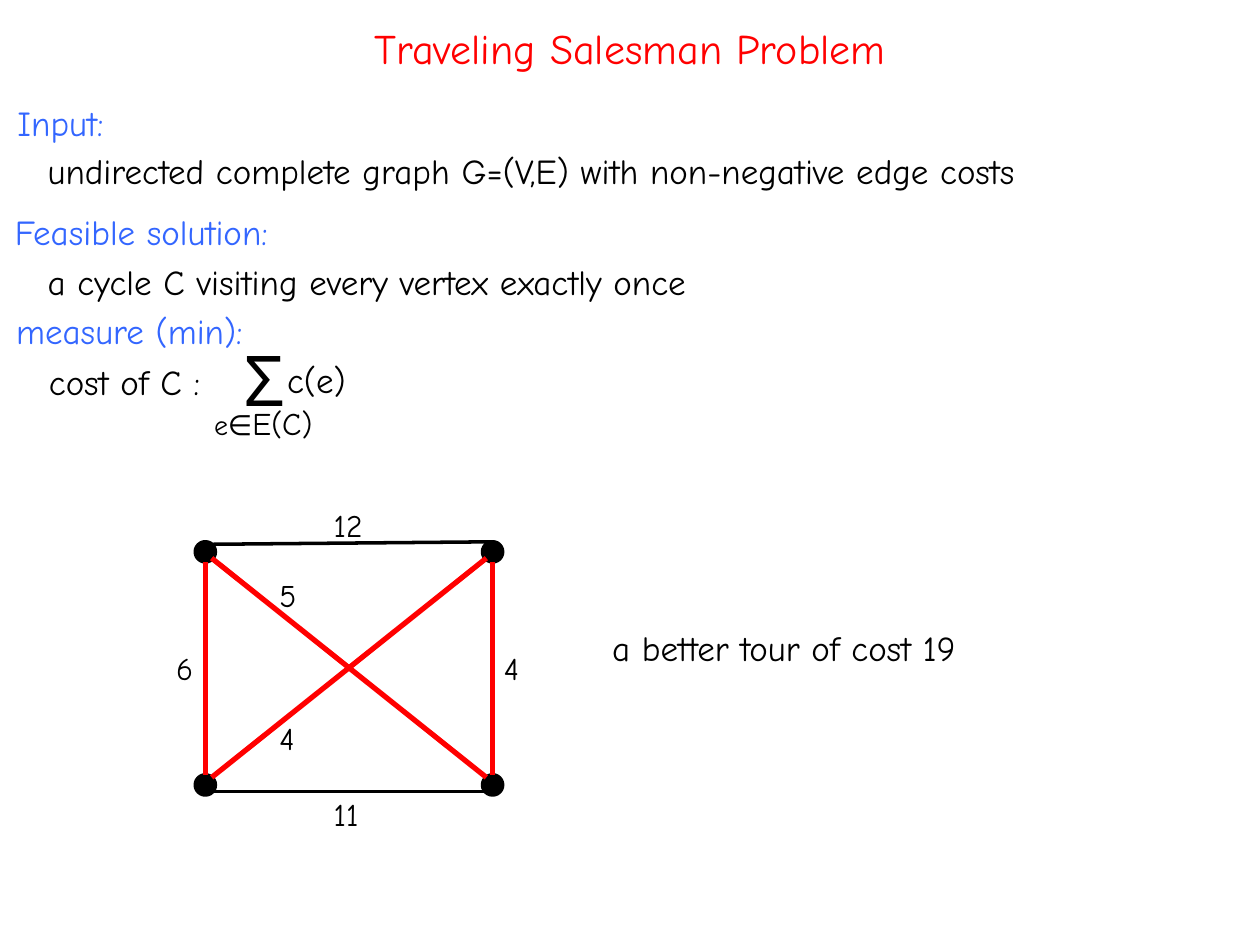
from dataclasses import dataclass

from pptx import Presentation
from pptx.dml.color import RGBColor as Color
from pptx.enum.shapes import MSO_CONNECTOR as Connector, MSO_SHAPE as Shape
from pptx.enum.text import MSO_ANCHOR as Anchor, PP_ALIGN as Align
from pptx.oxml.ns import qn
from pptx.util import Inches, Pt


@dataclass(frozen=True)
class Theme:
    """Colours, fonts and type sizes of the slide."""
    ink: Color = Color.from_string("000000")
    heading: Color = Color.from_string("3366FF")
    accent: Color = Color.from_string("FF0000")
    font: str = "Comic Neue"
    title: int = 24
    body: int = 20
    label: int = 18
    small: int = 16
    symbol: int = 40
    edge: int = 2
    tour: int = 3


THEME = Theme()


def apply(target, values):
    """Set each attribute of target from a dict of format values."""
    for name, value in values.items():
        setattr(target, name, value)


def add_span(para, text, size, color):
    """Append one formatted run to a paragraph."""
    span = para.add_run()
    span.text = text
    apply(span.font, {"name": THEME.font, "size": Pt(size)})
    span.font.color.rgb = color


def add_text(page, box, spans, color=THEME.ink, wrap=True):
    """Place a text box holding one line of (text, size) spans."""
    frame = page.shapes.add_textbox(*map(Inches, box)).text_frame
    frame.word_wrap = wrap
    for text, size in spans:
        add_span(frame.paragraphs[0], text, size, color)


def add_title(page, box, text):
    """Format the title placeholder within the box."""
    left, top, width, height = map(Inches, box)
    title = page.shapes.title
    apply(title, {"left": left, "top": top, "width": width, "height": height})
    apply(title.text_frame, {"vertical_anchor": Anchor.TOP, "word_wrap": True})
    para = title.text_frame.paragraphs[0]
    para.alignment = Align.CENTER
    add_span(para, text, THEME.title, THEME.accent)


def add_definition(page, box):
    """Place the three headings, each with its indented statement."""
    left, top, width, _ = box
    lines = [
        (0.02, 0, "Input:", THEME.heading),
        (0.26, 0.38, "undirected complete graph G=(V,E) with non-negative edge costs", THEME.ink),
        (0, 0.86, "Feasible solution:", THEME.heading),
        (0.26, 1.26, "a cycle C visiting every vertex exactly once", THEME.ink),
        (0.01, 1.65, "measure (min):", THEME.heading),
        (0.27, 2.05, "cost of C :", THEME.ink),
    ]
    for indent, drop, text, color in lines:
        line_box = (left + indent, top + drop, width - indent, 0.44)
        add_text(page, line_box, [(text, THEME.body)], color)


def add_sum(page, box):
    """Place the sum sign with its index set and summand."""
    left, top, _, _ = box
    add_text(page, (left + 0.24, top, 0.55, 0.77), [("Σ", THEME.symbol)])
    index = [("e∈", THEME.small), ("E(C)", THEME.label)]
    add_text(page, (left, top + 0.54, 1.15, 0.4), index)
    add_text(page, (left + 0.58, top + 0.18, 0.79, 0.44), [("c(e)", THEME.body)])


def add_vertex(page, x, y, size):
    """Draw one round vertex with its top left corner at x, y."""
    dot = page.shapes.add_shape(Shape.OVAL, *map(Inches, (x, y, size, size)))
    dot.shadow.inherit = False
    dot.fill.solid()
    dot.fill.fore_color.rgb = THEME.ink
    dot.line.color.rgb = THEME.ink
    dot.line.width = Pt(THEME.edge)


def add_edge(page, start, end, color, weight):
    """Draw one straight edge without a shadow."""
    edge = page.shapes.add_connector(Connector.STRAIGHT, *map(Inches, start + end))
    edge.line.color.rgb = color
    edge.line.width = Pt(weight)
    properties = edge._element.spPr
    properties.append(properties.makeelement(qn("a:effectLst"), {}))


def add_graph(page, box):
    """Draw the four vertices, the weighted edges and the tour."""
    left, top, width, height = box
    size = 0.16
    right, bottom = left + width - size, top + height - size
    for x in (left, right):
        for y in (top, bottom):
            add_vertex(page, x, y, size)

    west, east = left + size / 2, right + size / 2
    inner_west, inner_east = left + 0.13, right + 0.03
    upper, lower = top + 0.13, bottom + 0.02
    plain = [
        ((inner_west, top + 0.02), (east, top)),
        ((inner_west, bottom + 0.13), (inner_east, bottom + 0.13)),
    ]
    tour = [
        ((inner_east, upper), (inner_west, lower)),
        ((inner_east, lower), (inner_west, upper)),
        ((west, top + size), (west, bottom)),
        ((east, top + size), (east, bottom)),
    ]
    for edges, color, weight in ((plain, THEME.ink, THEME.edge), (tour, THEME.accent, THEME.tour)):
        for start, end in edges:
            add_edge(page, start, end, color, weight)

    costs = [
        ("12", 1, -0.33), ("11", 1, 1.96),
        ("6", -0.25, 0.8), ("4", 2.35, 0.8),
        ("5", 0.57, 0.22), ("4", 0.57, 1.36),
    ]
    for cost, x, y in costs:
        add_text(page, (left + x, top + y, 0.54, 0.4), [(cost, THEME.label)])


def main():
    """Build and save the slide."""
    deck = Presentation()
    apply(deck, {"slide_width": Inches(10), "slide_height": Inches(7.5)})
    page = deck.slides.add_slide(deck.slide_layouts.get_by_name("Title Only"))
    add_title(page, (1.79, 0.13, 6.42, 0.94), "Traveling Salesman Problem")
    add_definition(page, (0.02, 0.76, 9.95, 2.49))
    add_sum(page, (1.6, 2.62, 1.37, 0.94))
    add_graph(page, (1.55, 4.3, 2.44, 2.01))
    add_text(page, (4.76, 4.92, 3.35, 0.44), [("a better tour of cost 19", THEME.body)], wrap=False)
    deck.save("out.pptx")


if __name__ == "__main__":
    main()
